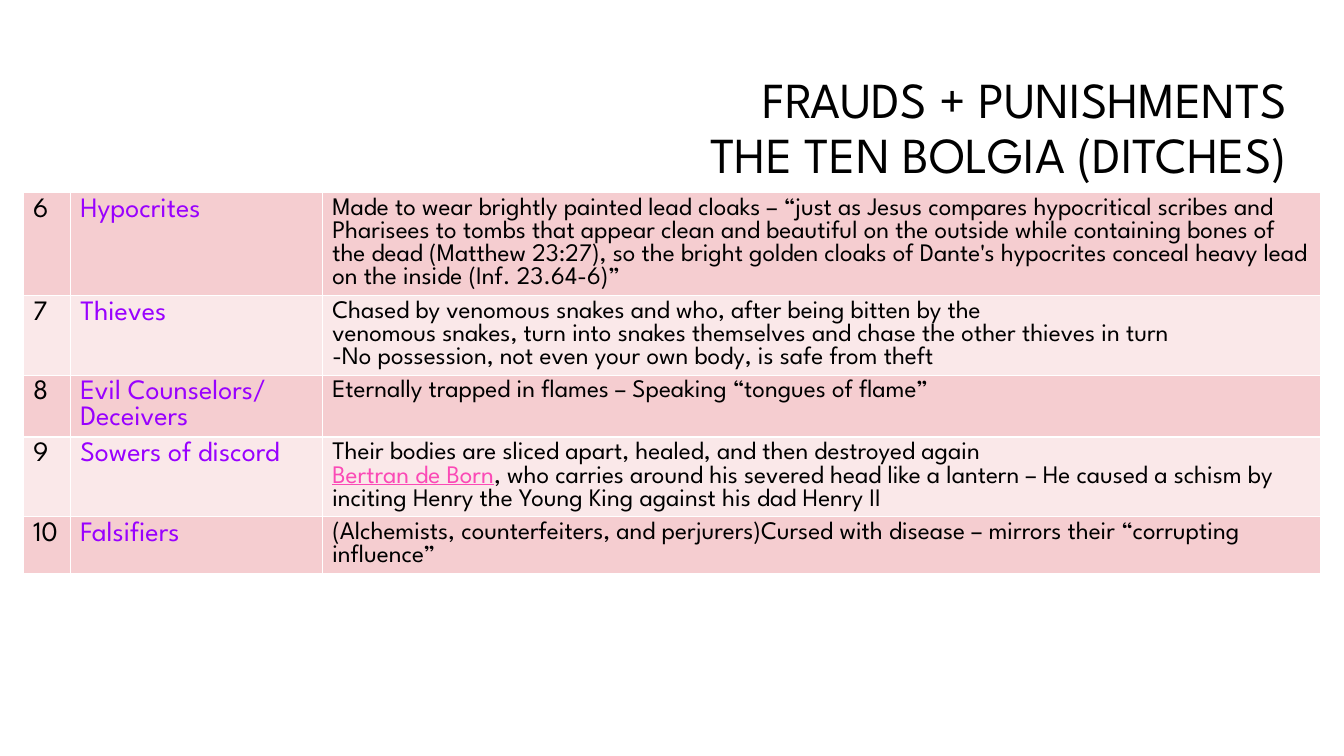
from dataclasses import dataclass

from lxml import etree
from pptx import Presentation
from pptx import util as u
from pptx.dml import color as col
from pptx.enum import text as txt
from pptx.oxml import ns


@dataclass(frozen=True)
class Theme:
    """Colours, font and type sizes of the slide."""
    font: str = "League Spartan"
    ink: str = "000000"
    sin: str = "9900FF"
    link: str = "FB4AB6"
    edge: str = "FFFFFF"
    bands: tuple[str, str] = ("F5CDD0", "FAE8E9")
    head: int = 36
    name: int = 20
    body: int = 18


@dataclass(frozen=True)
class Run:
    """A piece of text with its own look."""
    text: str
    size: int
    tint: str
    under: bool = False


@dataclass(frozen=True)
class Ditch:
    """One ditch: number, sinners and lines of punishment."""
    num: int
    name: str
    fate: tuple[str, ...]
    link: str = ""


LOOK = Theme()
TITLE = ("FRAUDS + PUNISHMENTS", "THE TEN BOLGIA (DITCHES)")
WIDTHS = (1.19, 6.35, 25.17)
ROW = 1.37
DITCHES = (
    Ditch(6, "Hypocrites", (
        "Made to wear brightly painted lead cloaks – “just as Jesus compares "
        "hypocritical scribes and Pharisees to tombs that appear clean and "
        "beautiful on the outside while containing bones of the dead "
        "(Matthew 23:27), so the bright golden cloaks of Dante's hypocrites "
        "conceal heavy lead on the inside (Inf. 23.64-6)”",)),
    Ditch(7, "Thieves", (
        "Chased by venomous snakes and who, after being bitten by the",
        "venomous snakes, turn into snakes themselves and chase the other "
        "thieves in turn",
        "-No possession, not even your own body, is safe from theft")),
    Ditch(8, "Evil Counselors/ Deceivers", (
        "Eternally trapped in flames – Speaking “tongues of flame”",)),
    Ditch(9, "Sowers of discord", (
        "Their bodies are sliced apart, healed, and then destroyed again",
        "Bertran de Born, who carries around his severed head like a lantern "
        "– He caused a schism by inciting Henry the Young King against his "
        "dad Henry II"), "Bertran de Born"),
    Ditch(10, "Falsifiers", (
        "(Alchemists, counterfeiters, and perjurers)Cursed with disease – "
        "mirrors their “corrupting influence”",)),
)


def put(obj, vals: dict) -> None:
    """Set each named attribute on an object."""
    for key, val in vals.items():
        setattr(obj, key, val)


def write(para, run: Run) -> None:
    """Add a formatted run to a paragraph."""
    part = para.add_run()
    part.text = run.text
    put(part.font, {"name": LOOK.font, "size": u.Pt(run.size),
                    "underline": run.under})
    part.font.color.rgb = col.RGBColor.from_string(run.tint)


def split(line: str, link: str) -> list[Run]:
    """Cut a line into runs, with the link set apart."""
    if not link or not line.startswith(link):
        return [Run(line, LOOK.body, LOOK.ink)]
    return [Run(link, LOOK.body, LOOK.link, True),
            Run(line.removeprefix(link), LOOK.body, LOOK.ink)]


def fill(cell, lines: list[list[Run]], band: str) -> None:
    """Draw a cell with its borders, band colour and text."""
    props = cell._tc.get_or_add_tcPr()
    for side in ("lnL", "lnR", "lnT", "lnB"):
        edge = etree.SubElement(props, ns.qn(f"a:{side}"), w=str(u.Pt(1)))
        solid = etree.SubElement(edge, ns.qn("a:solidFill"))
        etree.SubElement(solid, ns.qn("a:srgbClr"), val=LOOK.edge)
    cell.fill.solid()
    cell.fill.fore_color.rgb = col.RGBColor.from_string(band)
    frame = cell.text_frame
    for i, runs in enumerate(lines):
        para = frame.add_paragraph() if i else frame.paragraphs[0]
        for run in runs:
            write(para, run)


def add_title(slide) -> None:
    """Place and write the two-line title."""
    box = slide.shapes.title
    put(box, {"left": u.Cm(1.14), "top": u.Cm(1.65),
              "width": u.Cm(31.55), "height": u.Cm(2.13)})
    frame = box.text_frame
    put(frame, {"word_wrap": True, "auto_size": txt.MSO_AUTO_SIZE.NONE,
                "vertical_anchor": txt.MSO_ANCHOR.TOP})
    put(frame, {f"margin_{side}": u.Cm(0.25)
                for side in ("left", "right", "top", "bottom")})
    para = frame.paragraphs[0]
    put(para, {"alignment": txt.PP_ALIGN.RIGHT, "line_spacing": 0.9})
    for i, line in enumerate(TITLE):
        if i:
            para.add_line_break()
        write(para, Run(line, LOOK.head, LOOK.ink))


def add_grid(slide) -> None:
    """Build the table of ditches."""
    grid = slide.shapes.add_table(
        len(DITCHES), len(WIDTHS), u.Cm(0.58), u.Cm(4.85),
        u.Cm(sum(WIDTHS)), u.Cm(ROW * len(DITCHES))).table
    put(grid, {"first_row": False, "horz_banding": False})
    for column, width in zip(grid.columns, WIDTHS):
        column.width = u.Cm(width)
    for i, ditch in enumerate(DITCHES):
        texts = ([[Run(str(ditch.num), LOOK.name, LOOK.ink)]],
                 [[Run(ditch.name, LOOK.name, LOOK.sin)]],
                 [split(line, ditch.link) for line in ditch.fate])
        for j, lines in enumerate(texts):
            fill(grid.cell(i, j), lines, LOOK.bands[i % 2])


def main() -> None:
    """Build and save the slide."""
    deck = Presentation()
    put(deck, {"slide_width": u.Cm(33.87), "slide_height": u.Cm(19.05)})
    slide = deck.slides.add_slide(deck.slide_layouts[5])
    add_title(slide)
    add_grid(slide)
    deck.save("out.pptx")


if __name__ == "__main__":
    main()
